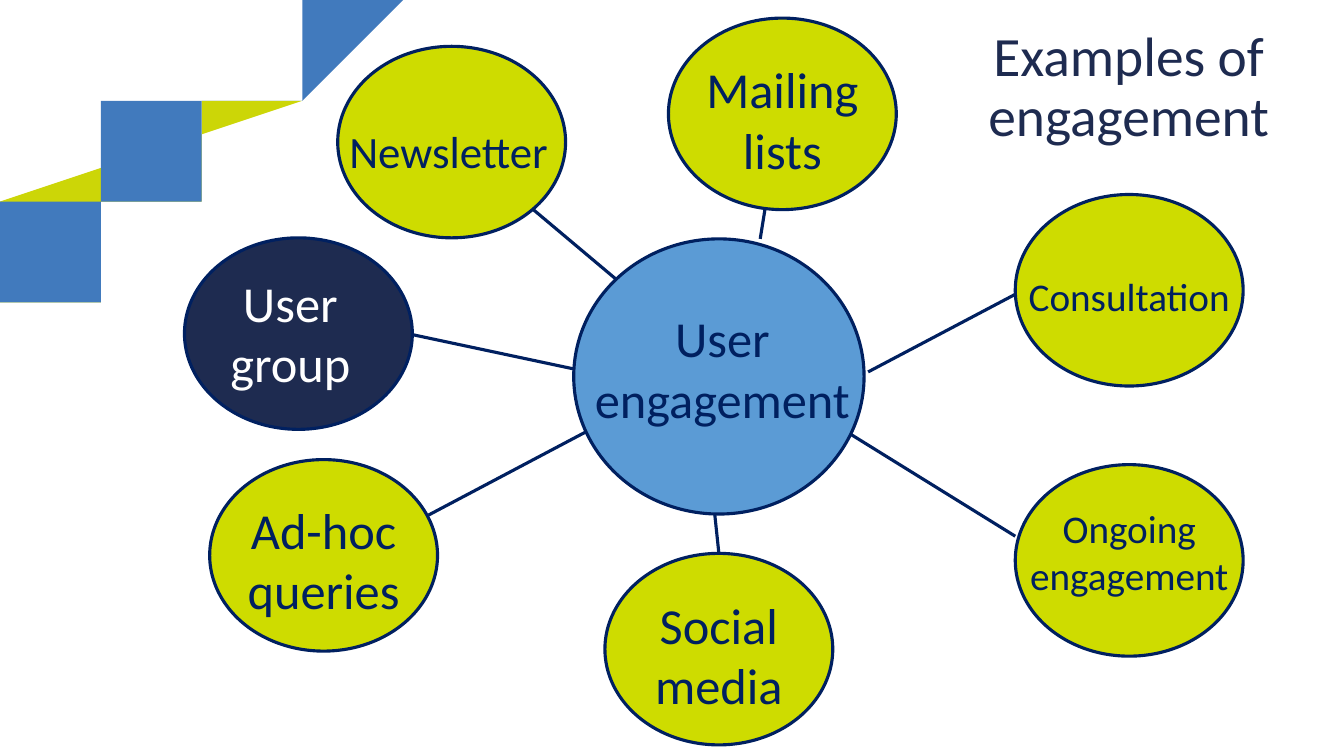
from lxml.etree import SubElement
from pptx import Presentation
from pptx.dml.color import RGBColor
from pptx.enum.shapes import MSO_CONNECTOR, MSO_SHAPE
from pptx.enum.text import MSO_ANCHOR, MSO_AUTO_SIZE, PP_ALIGN
from pptx.oxml.ns import qn
from pptx.util import Inches, Pt

NAVY = RGBColor(0x00, 0x20, 0x60)
DARK = RGBColor(0x1E, 0x2B, 0x50)
LIME = RGBColor(0xCE, 0xDC, 0x00)
OLIVE = RGBColor(0xCC, 0xD6, 0x07)
BLUE = RGBColor(0x5B, 0x9B, 0xD5)
SWOOSH = RGBColor(0x41, 0x7A, 0xBD)
WHITE = RGBColor(0xFF, 0xFF, 0xFF)

NODE_W, NODE_H = 2.26, 1.9

# label, left, top, text left, text top, text height, size, fill, text colour
NODES = [
    ("Mailing lists", 6.63, 0.18, 6.63, 0.53, 1.31, 36, LIME, NAVY),
    ("Newsletter", 3.35, 0.46, 3.32, 1.18, 0.64, 32, LIME, NAVY),
    ("Social media", 6, 5.49, 6, 5.84, 1.31, 36, LIME, NAVY),
    ("Ad-hoc queries", 2.08, 4.56, 2.08, 4.9, 1.31, 36, LIME, NAVY),
    ("User group", 1.83, 2.36, 1.75, 2.65, 1.31, 36, DARK, WHITE),
    ("Ongoing engagement", 10.07, 4.61, 10.07, 4.95, 1.04, 28, LIME, NAVY),
    ("Consultation", 10.07, 1.93, 10.07, 2.65, 0.57, 28, LIME, NAVY),
]

SPOKES = [
    (8.61, 3.69, 10.07, 2.92),
    (5.69, 3.66, 4.09, 3.32),
    (8.44, 4.31, 10.07, 5.32),
    (5.82, 4.28, 4.25, 5.11),
    (7.09, 5.11, 7.13, 5.49),
    (5.29, 2.08, 6.11, 2.77),
    (7.59, 2.06, 7.54, 2.37),
]


def bezier(p0, p1, p2, p3, steps=40):
    """Return points along a cubic curve, both ends included."""
    points = []
    for i in range(steps + 1):
        t = i / steps
        u = 1 - t
        weights = (u**3, 3 * u * u * t, 3 * u * t * t, t**3)
        points.append(tuple(sum(w * p[axis] for w, p in zip(weights, (p0, p1, p2, p3)))
                            for axis in (0, 1)))
    return points


class Diagram:
    line_width = Pt(2.25)
    font_name = "Calibri"

    def __init__(self, slide):
        self.shapes = slide.shapes

    def outline(self, points, color):
        builder = self.shapes.build_freeform(*points[0], scale=Inches(1))
        builder.add_line_segments(points[1:], close=True)
        s = builder.convert_to_shape()
        s.shadow.inherit = False
        s.fill.solid()
        s.fill.fore_color.rgb = color
        s.line.fill.background()

    def spoke(self, *ends):
        s = self.shapes.add_connector(MSO_CONNECTOR.STRAIGHT, *map(Inches, ends))
        s.line.color.rgb = NAVY
        s.line.width = self.line_width
        SubElement(s._element.spPr, qn("a:effectLst"))

    def text(self, shapes, box, text, size, color, frame=None, paragraph=None):
        tf = shapes.add_textbox(*map(Inches, box)).text_frame
        p = tf.paragraphs[0]
        r = p.add_run()
        r.text = text
        r.font.color.rgb = color
        formats = [
            (tf, {"word_wrap": True, **(frame or {})}),
            (p, {"alignment": PP_ALIGN.CENTER, **(paragraph or {})}),
            (r.font, {"name": self.font_name, "size": Pt(size)}),
        ]
        for target, values in formats:
            for name, value in values.items():
                setattr(target, name, value)

    def node(self, box, text_box, text, size, fill, color):
        """Group an ellipse with its label."""
        group = self.shapes.add_group_shape()
        s = group.shapes.add_shape(MSO_SHAPE.OVAL, *map(Inches, box))
        s.shadow.inherit = False
        s.fill.solid()
        s.fill.fore_color.rgb = fill
        s.line.color.rgb = NAVY
        s.line.width = self.line_width
        self.text(group.shapes, text_box, text, size, color,
                  {"auto_size": MSO_AUTO_SIZE.SHAPE_TO_FIT_TEXT})


def main():
    prs = Presentation()
    prs.slide_width, prs.slide_height = Inches(13.33), Inches(7.5)
    diagram = Diagram(prs.slides.add_slide(prs.slide_layouts[6]))

    wedge = bezier((2.54, 1.01), (1.4, 1.65), (0.56, 2.53), (0.2, 3.56))
    diagram.outline([(2.52, 0.8), (2.6, 0.98), *wedge, (0.16, 3.69), (0, 3.32), (0, 1.93)], OLIVE)
    outer = bezier((6.67, 0), (3.1, 0), (0.19, 1.98), (0.01, 4.46))
    inner = bezier((0.07, 2.93), (0.69, 1.37), (2.72, 0.24), (5.26, 0))
    diagram.outline([(7.16, 0), *outer, (0, 4.74), (0, 3.17), *inner], SWOOSH)

    for ends in SPOKES:
        diagram.spoke(*ends)
    diagram.node((5.69, 2.37, 2.88, 2.73), (5.69, 3, 2.95, 1.31),
                 "User engagement", 36, BLUE, NAVY)
    for label, left, top, text_left, text_top, text_height, size, fill, color in NODES:
        diagram.node((left, top, NODE_W, NODE_H), (text_left, text_top, NODE_W, text_height),
                     label, size, fill, color)

    diagram.text(diagram.shapes, (9.55, 0.38, 3.29, 1), "Examples of engagement", 39.6, DARK,
                 {"vertical_anchor": MSO_ANCHOR.MIDDLE}, {"line_spacing": 0.9})
    prs.save("out.pptx")


if __name__ == "__main__":
    main()
